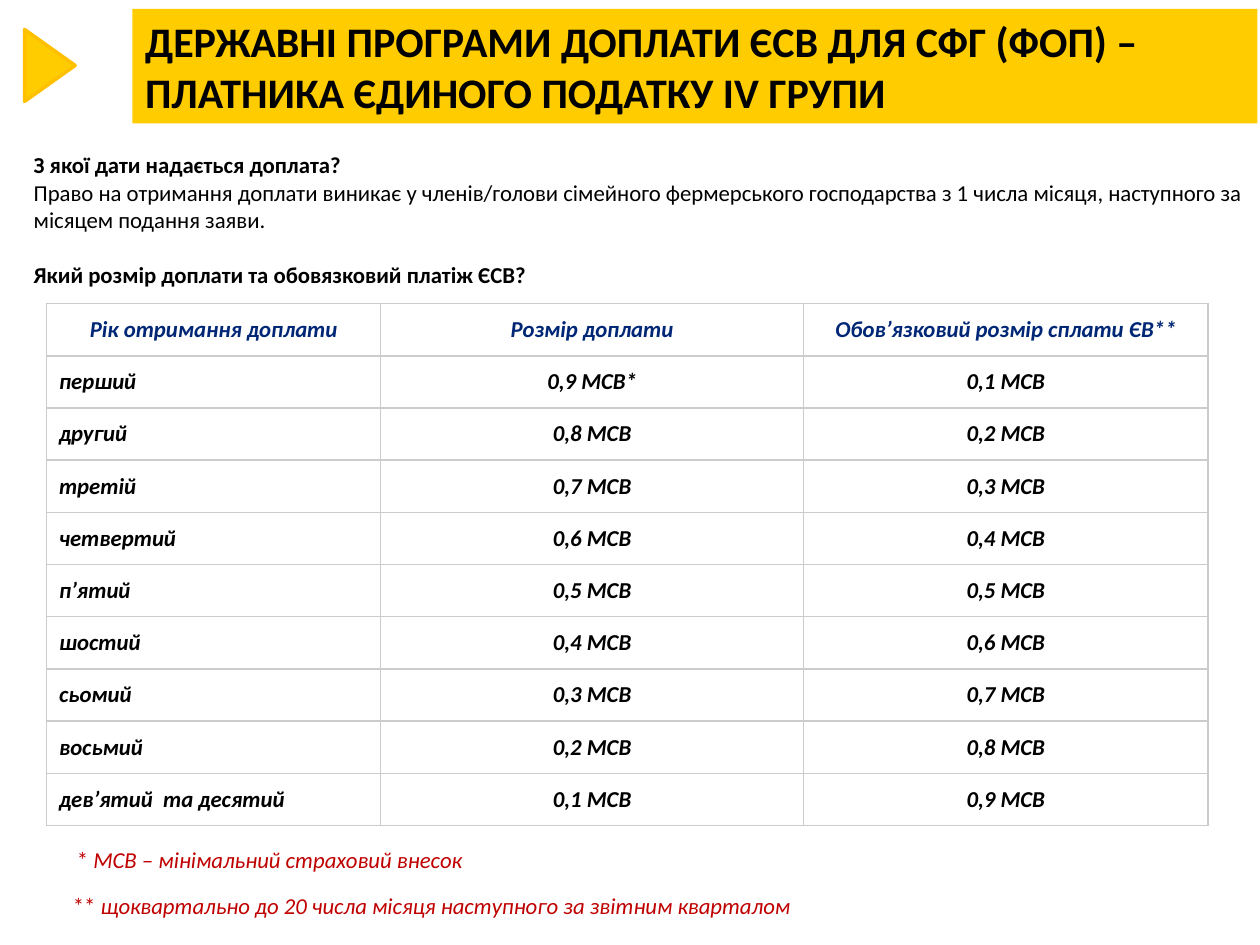
"""Builds the slide on state co-payment of the social contribution for family farms."""
from lxml import etree
from pptx import Presentation
from pptx import util as u
from pptx.dml.color import RGBColor
from pptx.enum import shapes, text
from pptx.oxml import ns

FONT = "Calibri"
BLACK, NAVY, RED = "000000", "002776", "C00000"
YELLOW, AMBER, GREY = "FFCC00", "FFC000", "CCCCCC"
BODY_SIZE = 13

TITLE = "ДЕРЖАВНІ ПРОГРАМИ ДОПЛАТИ ЄСВ ДЛЯ СФГ (ФОП) – ПЛАТНИКА ЄДИНОГО ПОДАТКУ IV ГРУПИ"
INTRO = [
    ("З якої дати надається доплата?", True, 0),
    ("Право на отримання доплати виникає у членів/голови сімейного фермерського "
     "господарства з 1 числа місяця, наступного за місяцем подання заяви.", False, 0),
    ("Який розмір доплати та обовязковий платіж ЄСВ?", True, 16),
]
HEADERS = ["Рік отримання доплати", "Розмір доплати", "Обов’язковий розмір сплати ЄВ**"]
PAYMENTS = [
    ("перший", "0,9 МСВ*", "0,1 МСВ"),
    ("другий", "0,8 МСВ", "0,2 МСВ"),
    ("третій", "0,7 МСВ", "0,3 МСВ"),
    ("четвертий", "0,6 МСВ", "0,4 МСВ"),
    ("п’ятий", "0,5 МСВ", "0,5 МСВ"),
    ("шостий", "0,4 МСВ", "0,6 МСВ"),
    ("сьомий", "0,3 МСВ", "0,7 МСВ"),
    ("восьмий", "0,2 МСВ", "0,8 МСВ"),
    ("дев’ятий  та десятий", "0,1 МСВ", "0,9 МСВ"),
]
COLUMN_WIDTHS = [6.73, 8.53, 8.15]
HEADER_HEIGHT, ROW_HEIGHT = 1.0, 1.04
FOOTNOTES = [
    ("* ", "МСВ – мінімальний страховий внесок", (1.3, 16.92, 23.4, 0.81)),
    ("** ", "щоквартально до 20 числа місяця наступного за звітним кварталом",
     (1.22, 17.86, 23.88, 0.81)),
]


def color(hex_code):
    return RGBColor.from_string(hex_code)


def box(left, top, width, height):
    return u.Cm(left), u.Cm(top), u.Cm(width), u.Cm(height)


def format_run(run, hex_code, size=BODY_SIZE, bold=False, italic=False):
    run.font.name, run.font.size = FONT, u.Pt(size)
    run.font.bold, run.font.italic = bold, italic
    run.font.color.rgb = color(hex_code)


def add_text_frame(slide, place):
    frame = slide.shapes.add_textbox(*box(*place)).text_frame
    frame.word_wrap = True
    return frame


def add_title(slide):
    title = slide.shapes.title
    title.left, title.top, title.width, title.height = box(2.67, 0.18, 22.68, 2.31)
    title.fill.solid()
    title.fill.fore_color.rgb = color(YELLOW)
    frame = title.text_frame
    frame.text = TITLE
    frame.auto_size = text.MSO_AUTO_SIZE.NONE
    frame.vertical_anchor = text.MSO_ANCHOR.MIDDLE
    paragraph = frame.paragraphs[0]
    paragraph.alignment = text.PP_ALIGN.LEFT
    format_run(paragraph.runs[0], BLACK, 24, bold=True)


def add_marker(slide):
    marker = slide.shapes.add_shape(
        shapes.MSO_SHAPE.ISOSCELES_TRIANGLE, *box(0.28, 0.81, 1.45, 1.02))
    marker.rotation = 90
    marker.shadow.inherit = False
    marker.fill.solid()
    marker.fill.fore_color.rgb = color(YELLOW)
    marker.line.color.rgb = color(AMBER)
    marker.line.width = u.Pt(2)


def add_intro(slide):
    frame = add_text_frame(slide, (0.43, 2.92, 24.99, 4.14))
    frame.text = "\n".join(wording for wording, _, _ in INTRO)
    for paragraph, (_, bold, gap) in zip(frame.paragraphs, INTRO):
        paragraph.space_before = u.Pt(gap)
        format_run(paragraph.runs[0], BLACK, bold=bold)
    frame.paragraphs[1].space_after = u.Pt(0)


def add_borders(cell):
    properties = cell._tc.get_or_add_tcPr()
    for position, side in enumerate(("lnL", "lnR", "lnT", "lnB")):
        line = etree.Element(ns.qn(f"a:{side}"), w=str(u.Pt(1)))
        fill = etree.SubElement(line, ns.qn("a:solidFill"))
        etree.SubElement(fill, ns.qn("a:srgbClr"), val=GREY)
        properties.insert(position, line)


def fill_cell(cell, wording, alignment, hex_code):
    cell.text = wording
    cell.fill.background()
    cell.margin_left = cell.margin_right = u.Cm(0.25)
    cell.margin_top = cell.margin_bottom = u.Cm(0.25)
    paragraph = cell.text_frame.paragraphs[0]
    paragraph.alignment = alignment
    paragraph.space_before = paragraph.space_after = u.Pt(10.3)
    format_run(paragraph.runs[0], hex_code, bold=True, italic=True)
    add_borders(cell)


def add_payment_table(slide):
    rows = [HEADERS, *PAYMENTS]
    height = HEADER_HEIGHT + ROW_HEIGHT * len(PAYMENTS)
    table = slide.shapes.add_table(
        len(rows), len(HEADERS), *box(0.94, 6.12, sum(COLUMN_WIDTHS), height)).table
    table.horz_banding = False
    for column, width in zip(table.columns, COLUMN_WIDTHS):
        column.width = u.Cm(width)
    for row_index, row in enumerate(rows):
        is_header = row_index == 0
        table.rows[row_index].height = u.Cm(HEADER_HEIGHT if is_header else ROW_HEIGHT)
        for column_index, wording in enumerate(row):
            is_label = column_index == 0 and not is_header
            alignment = text.PP_ALIGN.JUSTIFY if is_label else text.PP_ALIGN.CENTER
            fill_cell(table.cell(row_index, column_index), wording, alignment,
                      NAVY if is_header else BLACK)


def add_footnotes(slide):
    for mark, wording, place in FOOTNOTES:
        paragraph = add_text_frame(slide, place).paragraphs[0]
        for part, italic in ((mark, False), (wording, True)):
            run = paragraph.add_run()
            run.text = part
            format_run(run, RED, italic=italic)


def main():
    presentation = Presentation()
    presentation.slide_width, presentation.slide_height = u.Cm(25.4), u.Cm(19.05)
    slide = presentation.slides.add_slide(presentation.slide_layouts[5])
    add_title(slide)
    add_marker(slide)
    add_intro(slide)
    add_payment_table(slide)
    add_footnotes(slide)
    presentation.save("out.pptx")


if __name__ == "__main__":
    main()
